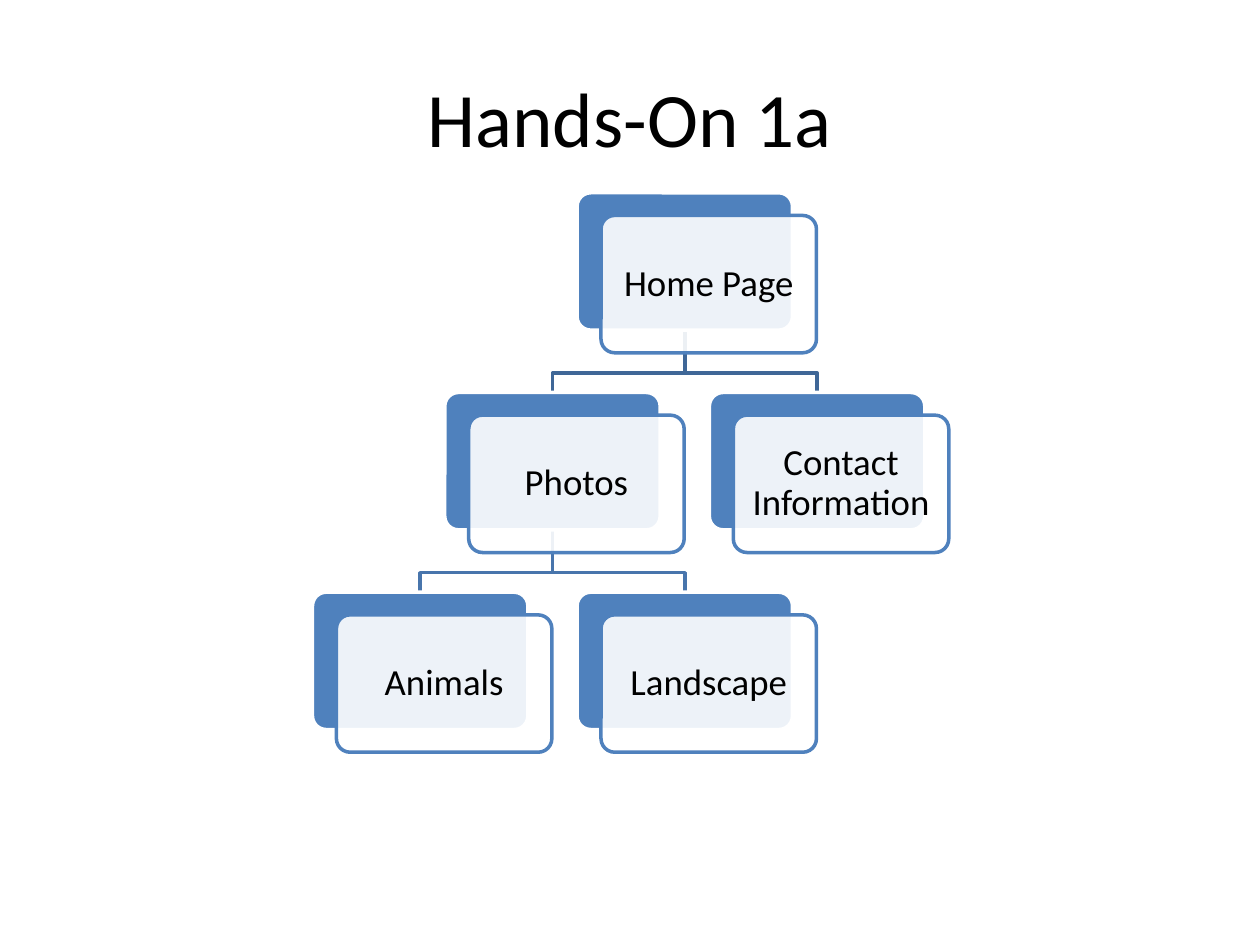
from lxml import etree
from pptx import Presentation
from pptx.dml.color import RGBColor
from pptx.enum.shapes import MSO_SHAPE
from pptx.enum.text import MSO_ANCHOR, PP_ALIGN
from pptx.oxml.ns import qn
from pptx.util import Inches, Pt

ROUNDED = MSO_SHAPE.ROUNDED_RECTANGLE
MIDDLE = MSO_ANCHOR.MIDDLE
CENTER = PP_ALIGN.CENTER

BLACK = RGBColor(0x00, 0x00, 0x00)
WHITE = RGBColor(0xFF, 0xFF, 0xFF)
BLUE = RGBColor(0x4F, 0x81, 0xBD)
LEVEL_LINES = [RGBColor(0x3F, 0x67, 0x97), RGBColor(0x48, 0x75, 0xAC)]

CARD_WIDTH, CARD_HEIGHT = Inches(1.71), Inches(1.09)
OFFSET_X, OFFSET_Y = Inches(0.19), Inches(0.18)
HALF_STEP, LEVEL_STEP = Inches(1.05), Inches(1.585)
BEND = Inches(0.34)

PAGES = {
    "Home Page": (2, 0),
    "Photos": (1, 1),
    "Animals": (0, 2),
    "Landscape": (2, 2),
    "Contact Information": (3, 1),
}
LINKS = [
    ("Home Page", "Contact Information"),
    ("Photos", "Landscape"),
    ("Photos", "Animals"),
    ("Home Page", "Photos"),
]


def write_text(frame, text, size, line_spacing=None):
    frame.text = text
    frame.word_wrap = True
    frame.vertical_anchor = MIDDLE
    paragraph = frame.paragraphs[0]
    paragraph.alignment = CENTER
    if line_spacing:
        paragraph.line_spacing = line_spacing
    font = paragraph.runs[0].font
    font.name = "Calibri"
    font.size = Pt(size)
    font.color.rgb = BLACK


def place_title(slide, text, left, top, width, height):
    title = slide.shapes.title
    title.left, title.top, title.width, title.height = left, top, width, height
    write_text(title.text_frame, text, 44)


def add_panel(shapes, left, top, fill, line, opacity=100):
    panel = shapes.add_shape(ROUNDED, left, top, CARD_WIDTH, CARD_HEIGHT)
    panel.adjustments[0] = 0.1
    panel.shadow.inherit = False
    panel.fill.solid()
    panel.fill.fore_color.rgb = fill
    panel.line.color.rgb = line
    panel.line.width = Pt(2)
    if opacity < 100:
        color = panel.fill._xPr.find(qn("a:solidFill"))[0]
        etree.SubElement(color, qn("a:alpha"), val=str(opacity * 1000))
    return panel


def add_card(shapes, text, left, top):
    add_panel(shapes, left, top, BLUE, WHITE)
    front = add_panel(shapes, left + OFFSET_X, top + OFFSET_Y, WHITE, BLUE, 90)
    frame = front.text_frame
    frame.margin_left = frame.margin_right = Inches(0.09)
    frame.margin_top = frame.margin_bottom = Inches(0.09)
    write_text(frame, text, 21, line_spacing=0.9)


def add_link(shapes, parent, child, color):
    start_x, start_y = parent[0] + CARD_WIDTH // 2, parent[1] + CARD_HEIGHT
    end_x, end_y = child[0] + CARD_WIDTH // 2, child[1]
    builder = shapes.build_freeform(start_x, start_y)
    bend_y = start_y + BEND
    builder.add_line_segments(
        [(start_x, bend_y), (end_x, bend_y), (end_x, end_y)], close=False
    )
    link = builder.convert_to_shape()
    link.shadow.inherit = False
    link.fill.background()
    link.line.color.rgb = color
    link.line.width = Pt(2)


def add_site_map(slide, left, top):
    shapes = slide.shapes.add_group_shape().shapes
    corners = {
        page: (left + column * HALF_STEP, top + level * LEVEL_STEP)
        for page, (column, level) in PAGES.items()
    }
    for parent, child in LINKS:
        level = PAGES[parent][1]
        add_link(shapes, corners[parent], corners[child], LEVEL_LINES[level])
    for page, corner in corners.items():
        add_card(shapes, page, *corner)


def main():
    presentation = Presentation()
    presentation.slide_width = Inches(10)
    presentation.slide_height = Inches(7.5)
    slide = presentation.slides.add_slide(presentation.slide_layouts[5])
    place_title(slide, "Hands-On 1a", Inches(0.5), Inches(0.3), Inches(9), Inches(1.25))
    add_site_map(slide, Inches(2.48), Inches(1.53))
    presentation.save("out.pptx")


if __name__ == "__main__":
    main()
